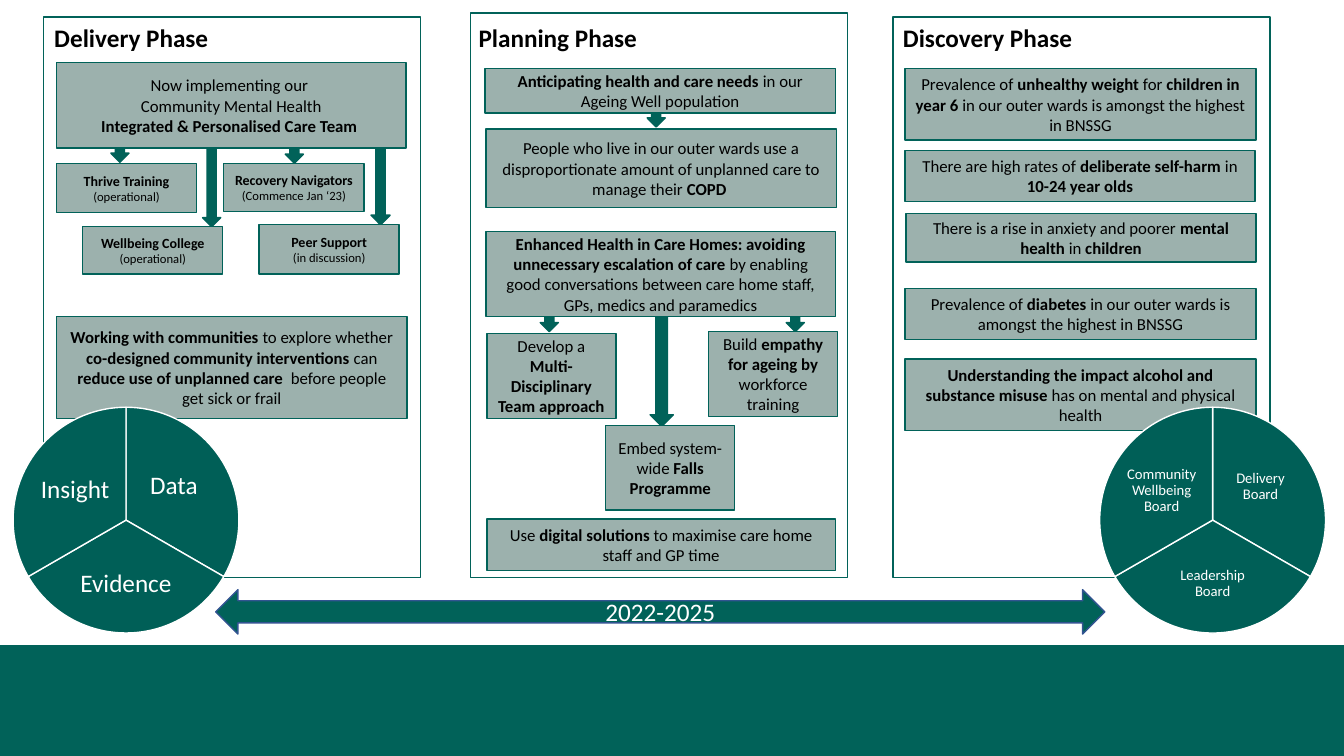
from dataclasses import dataclass
from math import cos, radians, sin

from pptx import Presentation
from pptx.dml.color import RGBColor
from pptx.enum.shapes import MSO_SHAPE
from pptx.enum.text import MSO_ANCHOR, PP_ALIGN
from pptx.oxml.ns import qn
from pptx.oxml.xmlchemy import OxmlElement
from pptx.util import Inches, Pt

RECTANGLE = MSO_SHAPE.RECTANGLE
DOWN_ARROW = MSO_SHAPE.DOWN_ARROW
DOUBLE_ARROW = MSO_SHAPE.LEFT_RIGHT_ARROW
MIDDLE = MSO_ANCHOR.MIDDLE
CENTER = PP_ALIGN.CENTER
LEFT = PP_ALIGN.LEFT

FONT = "Calibri"
GREEN, WHEEL_GREEN, SAGE = "016259", "005F57", "9CB1AD"
BLACK, WHITE, BLUE = "000000", "FFFFFF", "325491"
SLIDE_WIDTH = 40 / 3
RADIUS = 1.12


@dataclass
class Panel:
    title: str
    left: float
    top: float
    height: float
    title_left: float


@dataclass
class Box:
    """Text marks bold stretches with ** and separates paragraphs by newlines."""
    left: float
    top: float
    width: float
    height: float
    text: str
    plain_size: float = 12
    bold_size: float = 12


@dataclass
class Arrow:
    left: float
    top: float
    width: float
    height: float


@dataclass
class Sector:
    """Rim angles run clockwise from the top, in degrees."""
    rim: tuple[int, int, int]
    margins: tuple[float, float, float, float]  # left, top, right, bottom


@dataclass
class Wheel:
    center_x: float
    center_y: float
    size: float
    labels: tuple[str, str, str]


PANELS = [
    Panel("Delivery Phase", 0.43, 0.17, 5.56, 0.44),
    Panel("Planning Phase", 4.67, 0.13, 5.6, 4.65),
    Panel("Discovery Phase", 8.86, 0.17, 5.56, 8.86),
]

ARROWS = [
    # Delivery
    Arrow(1.1, 1.37, 0.18, 0.24),
    Arrow(2.83, 1.38, 0.18, 0.24),
    Arrow(2.01, 1.31, 0.18, 0.94),
    Arrow(3.68, 0.75, 0.19, 1.48),
    # Planning
    Arrow(6.42, 1.01, 0.18, 0.25),
    Arrow(5.36, 3.04, 0.18, 0.25),
    Arrow(6.45, 3.1, 0.23, 1.13),
    Arrow(7.8, 3.04, 0.18, 0.25),
]

BOXES = [
    # Delivery
    Box(0.56, 0.62, 3.47, 0.85, "Now implementing our \nCommunity Mental Health\n"
        "**Integrated & Personalised Care Team **"),
    Box(0.56, 1.62, 1.39, 0.49, "**Thrive Training **(operational)", 9, 10),
    Box(2.22, 1.62, 1.39, 0.48, "**Recovery Navigators **(Commence Jan ‘23)", 9, 10),
    Box(0.82, 2.25, 1.39, 0.47, "**Wellbeing College **(operational)", 9, 10),
    Box(2.57, 2.23, 1.39, 0.49, "**Peer Support**\n(in discussion)", 9, 10),
    Box(0.56, 3.14, 3.48, 1.01, "**Working with communities **to explore whether "
        "**co-designed community interventions **can** reduce use of unplanned care  **"
        "before people get sick or frail"),
    # Planning
    Box(4.81, 0.68, 3.48, 0.44, "**Anticipating health and care needs **in our "
        "Ageing Well population"),
    Box(4.82, 1.28, 3.48, 0.78, "People who live in our outer wards use a "
        "disproportionate amount of unplanned care to manage their **COPD **"),
    Box(4.82, 2.3, 3.47, 0.84, "**Enhanced Health in Care Homes: avoiding unnecessary "
        "escalation of care **by enabling good conversations between care home staff, "
        "GPs, medics and paramedics"),
    Box(4.83, 3.31, 1.28, 0.84, "Develop a **Multi-Disciplinary Team approach**"),
    Box(6.01, 4.22, 1.28, 0.84, "Embed system-wide **Falls Programme**"),
    Box(7.03, 3.29, 1.28, 0.84, "Build **empathy for ageing by **workforce training"),
    Box(4.83, 5.15, 3.46, 0.51, "Use **digital solutions **to maximise care home staff "
        "and GP time"),
    # Discovery
    Box(8.98, 0.68, 3.48, 0.71, "Prevalence of **unhealthy weight** for **children in "
        "year 6 **in our outer wards is amongst the highest in BNSSG"),
    Box(8.98, 1.49, 3.47, 0.51, "There are high rates of **deliberate self-harm **in "
        "**10-24 year olds**"),
    Box(8.99, 2.12, 3.47, 0.48, "There is a rise in anxiety and poorer **mental health "
        "**in** children**"),
    Box(8.98, 2.86, 3.48, 0.51, "Prevalence of **diabetes **in our outer wards is "
        "amongst the highest in BNSSG"),
    Box(8.98, 3.56, 3.48, 0.71, "**Understanding the impact alcohol and substance "
        "misuse **has on mental and physical health"),
]

SECTORS = [
    Sector((0, 90, 120), (0.12, 0.44, 0.29, 0.55)),
    Sector((120, 180, 240), (0.49, 0.31, 0.49, 0.16)),
    Sector((240, 270, 360), (0.25, 0.48, 0.14, 0.51)),
]

WHEELS = [
    Wheel(1.25, 5.16, 18, ("Data", "Evidence", "Insight")),
    Wheel(12.03, 5.16, 10.5,
          ("Delivery Board", "Leadership Board", "Community Wellbeing Board")),
]


def color(value: str) -> RGBColor:
    return RGBColor.from_string(value)


def style(shape, fill: str | None, line: str | None) -> None:
    shape.shadow.inherit = False
    if fill:
        shape.fill.solid()
        shape.fill.fore_color.rgb = color(fill)
    else:
        shape.fill.background()
    if line:
        shape.line.color.rgb = color(line)
        shape.line.width = Pt(1)
    else:
        shape.line.fill.background()


def add_preset(page, kind, left: float, top: float, width: float, height: float,
               fill: str | None, line: str | None):
    shape = page.shapes.add_shape(
        kind, Inches(left), Inches(top), Inches(width), Inches(height))
    style(shape, fill, line)
    return shape


def write(shape, text: str, plain_size: float, bold_size: float, ink: str,
          align=CENTER, line_spacing: float = 1.0) -> None:
    frame = shape.text_frame
    frame.word_wrap = True
    for index, line in enumerate(text.split("\n")):
        para = frame.add_paragraph() if index else frame.paragraphs[0]
        para.alignment = align
        para.line_spacing = line_spacing
        for position, part in enumerate(line.split("**")):
            if not part:
                continue
            span = para.add_run()
            span.text = part
            span.font.name = FONT
            span.font.bold = position % 2 == 1
            span.font.size = Pt(bold_size if span.font.bold else plain_size)
            span.font.color.rgb = color(ink)


def add_panel(page, panel: Panel) -> None:
    add_preset(page, RECTANGLE, panel.left, panel.top, 3.74, panel.height, None, GREEN)
    heading = page.shapes.add_textbox(
        Inches(panel.title_left), Inches(0.17), Inches(3.74), Inches(0.4))
    write(heading, f"**{panel.title}**", 18, 18, BLACK, LEFT)


def add_box(page, box: Box) -> None:
    shape = add_preset(page, RECTANGLE, box.left, box.top, box.width, box.height,
                       SAGE, GREEN)
    shape.text_frame.vertical_anchor = MIDDLE
    write(shape, box.text, box.plain_size, box.bold_size, BLACK)


def add_sector(page, wheel: Wheel, sector: Sector, label: str) -> None:
    center = (Inches(wheel.center_x), Inches(wheel.center_y))
    rim = [(center[0] + Inches(RADIUS * sin(radians(angle))),
            center[1] - Inches(RADIUS * cos(radians(angle)))) for angle in sector.rim]
    builder = page.shapes.build_freeform(*center, scale=1.0)
    builder.add_line_segments(rim, close=True)
    shape = builder.convert_to_shape()
    # Bend the two rim segments into arcs
    segments = list(shape._element.iter(qn("a:lnTo")))[1:3]
    for segment, start, end in zip(segments, sector.rim, sector.rim[1:]):
        arc = OxmlElement("a:arcTo")
        values = {"wR": Inches(RADIUS), "hR": Inches(RADIUS),
                  "stAng": (start + 270) % 360 * 60000, "swAng": (end - start) * 60000}
        for name, value in values.items():
            arc.set(name, str(int(value)))
        segment.getparent().replace(segment, arc)
    style(shape, WHEEL_GREEN, WHITE)
    frame = shape.text_frame
    frame.vertical_anchor = MIDDLE
    (frame.margin_left, frame.margin_top,
     frame.margin_right, frame.margin_bottom) = map(Inches, sector.margins)
    write(shape, label, wheel.size, wheel.size, WHITE, line_spacing=0.9)


def main() -> None:
    deck = Presentation()
    deck.slide_width, deck.slide_height = Inches(SLIDE_WIDTH), Inches(7.5)
    page = deck.slides.add_slide(deck.slide_layouts[6])

    # Footer band and phase panels
    add_preset(page, RECTANGLE, 0, 6.4, SLIDE_WIDTH, 1.1, GREEN, None)
    for panel in PANELS:
        add_panel(page, panel)

    # Arrows sit behind the boxes they leave
    for arrow in ARROWS:
        add_preset(page, DOWN_ARROW, arrow.left, arrow.top, arrow.width, arrow.height,
                   GREEN, GREEN)
    for box in BOXES:
        add_box(page, box)

    # Wheels
    for wheel in WHEELS:
        for sector, label in zip(SECTORS, wheel.labels):
            add_sector(page, wheel, sector, label)

    # Timeline
    timeline = add_preset(page, DOUBLE_ARROW, 2.14, 5.85, 8.82, 0.44, GREEN, BLUE)
    timeline.text_frame.vertical_anchor = MIDDLE
    write(timeline, "2022-2025", 18, 18, WHITE)

    deck.save("out.pptx")


if __name__ == "__main__":
    main()
